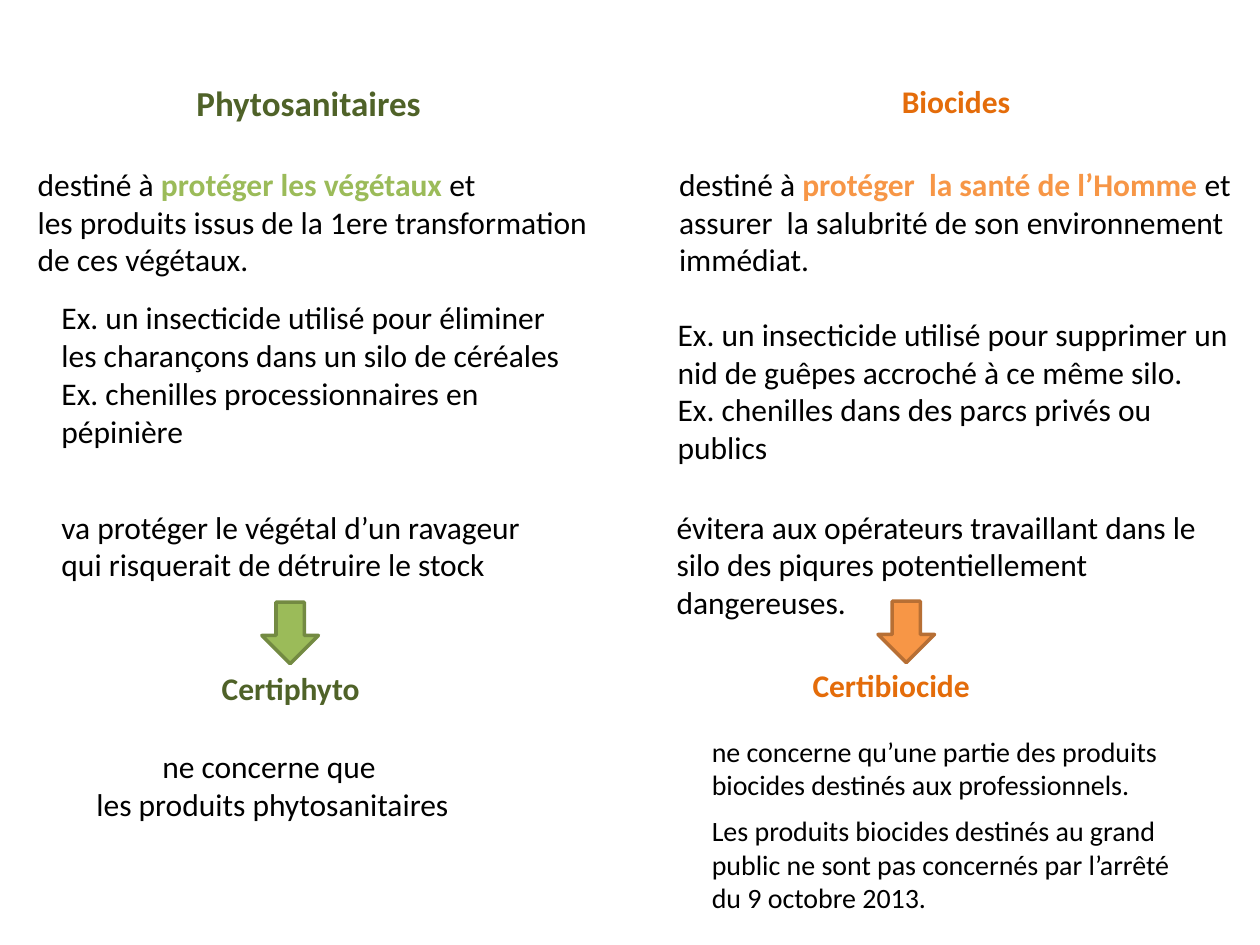
from dataclasses import dataclass

from pptx import Presentation
from pptx.dml.color import RGBColor
from pptx.enum.shapes import MSO_SHAPE as Shape
from pptx.enum.text import MSO_AUTO_SIZE as Fit, PP_ALIGN as Align
from pptx.util import Cm, Pt

BLACK = RGBColor(0x00, 0x00, 0x00)
GREEN = RGBColor(0x9B, 0xBB, 0x59)
MOSS = RGBColor(0x4F, 0x62, 0x28)
OLIVE = RGBColor(0x73, 0x8A, 0x42)
ORANGE = RGBColor(0xF7, 0x96, 0x46)
RUST = RGBColor(0xE4, 0x6C, 0x0A)
BROWN = RGBColor(0xB7, 0x6F, 0x34)


@dataclass
class Run:
    text: str
    color: RGBColor = BLACK
    bold: bool = False


@dataclass
class Note:
    left: float
    top: float
    width: float
    height: float
    paras: list[list[Run]]
    size: int = 18
    wrap: bool = True
    align: Align = Align.LEFT


@dataclass
class Arrow:
    left: float
    top: float
    fill: RGBColor
    line: RGBColor


def head(left: float, top: float, width: float, height: float,
         text: str, color: RGBColor, size: int = 18) -> Note:
    return Note(left, top, width, height, [[Run(text, color, True)]], size, wrap=False)


# Plant products, left column
PLANT = [
    head(3.71, 1.52, 5.08, 1.12, "Phytosanitaires", MOSS, 20),
    Note(0.51, 3.2, 11.86, 2.57, [
        [Run("destiné à "), Run("protéger les végétaux ", GREEN, True), Run("et ")],
        [Run("les produits issus de la 1ere transformation")],
        [Run("de ces végétaux.")],
    ], wrap=False, align=Align.JUSTIFY),
    Note(0.99, 5.89, 10.9, 3.33, [
        [Run("Ex. un insecticide utilisé pour éliminer les charançons dans un silo de céréales")],
        [Run("Ex. chenilles processionnaires en pépinière")],
    ]),
    Note(0.99, 10.11, 10.36, 1.8, [
        [Run("va protéger le végétal d’un ravageur qui risquerait de détruire le stock")],
    ]),
    head(4.22, 13.36, 3.33, 1.02, "Certiphyto", MOSS),
    Note(1.5, 14.94, 7.85, 1.8, [
        [Run("ne concerne que")],
        [Run(" les produits phytosanitaires")],
    ], wrap=False, align=Align.CENTER),
]

# Biocides, right column
BIOCIDE = [
    head(17.93, 1.52, 2.72, 1.02, "Biocides", RUST),
    Note(13.44, 3.2, 11.68, 2.57, [
        [Run("destiné à "), Run("protéger  la santé de l’Homme ", ORANGE, True),
         Run("et assurer  la salubrité de son environnement immédiat.")],
    ]),
    Note(13.41, 6.22, 11.71, 3.33, [
        [Run("Ex. un insecticide utilisé pour supprimer un nid de guêpes "
             "accroché à ce même silo.")],
        [Run("Ex. chenilles dans des parcs privés ou publics")],
    ]),
    Note(13.39, 10.11, 11.76, 3.33, [
        [Run("évitera aux opérateurs travaillant dans le silo des piqures "
             "potentiellement dangereuses.")],
    ]),
    head(16.13, 13.31, 3.71, 1.02, "Certibiocide", RUST),
    Note(14.1, 14.68, 9.8, 2.31, [
        [Run("ne concerne qu’une partie des produits biocides destinés aux professionnels.")],
    ], 16),
    Note(14.1, 16.28, 10.06, 2.31, [
        [Run("Les produits biocides destinés au grand public ne sont pas "
             "concernés par l’arrêté du 9 octobre 2013.")],
    ], 16),
]

ARROWS = [
    Arrow(5.28, 12.14, GREEN, OLIVE),
    Arrow(17.7, 12.12, ORANGE, BROWN),
]


def add_note(slide, note: Note) -> None:
    box = slide.shapes.add_textbox(
        Cm(note.left), Cm(note.top), Cm(note.width), Cm(note.height))
    frame = box.text_frame
    frame.word_wrap = note.wrap
    frame.auto_size = Fit.SHAPE_TO_FIT_TEXT
    for i, runs in enumerate(note.paras):
        para = frame.add_paragraph() if i else frame.paragraphs[0]
        para.alignment = note.align
        for item in runs:
            run = para.add_run()
            run.text = item.text
            font = run.font
            font.name = "Calibri"
            font.size = Pt(note.size)
            font.bold = item.bold
            font.color.rgb = item.color


def add_arrow(slide, arrow: Arrow) -> None:
    shape = slide.shapes.add_shape(
        Shape.DOWN_ARROW, Cm(arrow.left), Cm(arrow.top), Cm(1.14), Cm(1.24))
    shape.shadow.inherit = False
    shape.fill.solid()
    shape.fill.fore_color.rgb = arrow.fill
    shape.line.color.rgb = arrow.line
    shape.line.width = Pt(2)


def main() -> None:
    deck = Presentation()
    deck.slide_width, deck.slide_height = Cm(25.4), Cm(19.05)
    slide = deck.slides.add_slide(deck.slide_layouts[6])
    for note in PLANT + BIOCIDE:
        add_note(slide, note)
    for arrow in ARROWS:
        add_arrow(slide, arrow)
    deck.save("out.pptx")


if __name__ == "__main__":
    main()
